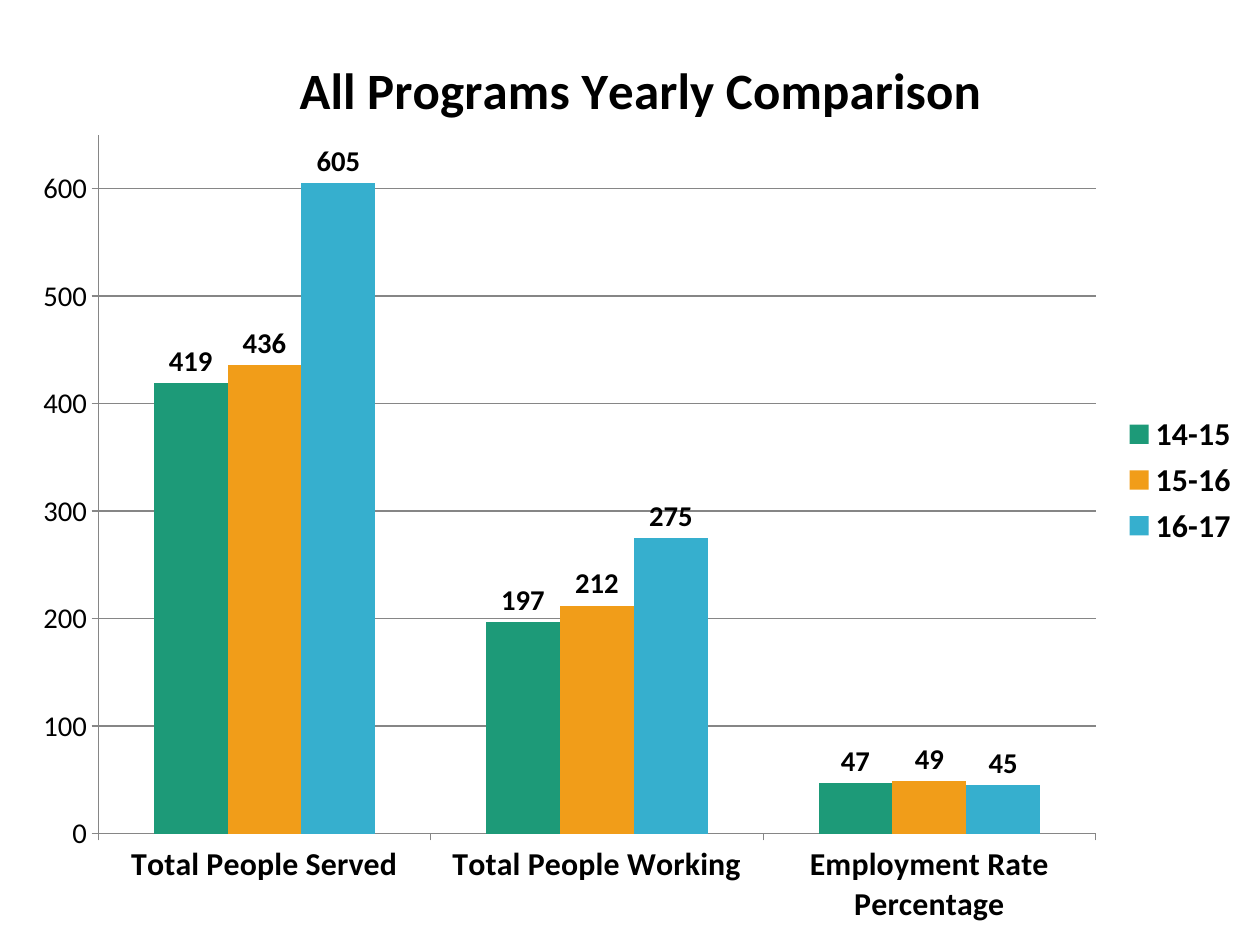
from lxml.etree import SubElement
from pptx import Presentation
from pptx.chart.data import CategoryChartData
from pptx.dml.color import RGBColor
from pptx.enum.chart import XL_CHART_TYPE as ChartType, XL_LABEL_POSITION as LabelPos
from pptx.enum.chart import XL_LEGEND_POSITION as LegendPos, XL_TICK_MARK as Tick
from pptx.oxml.ns import qn
from pptx.util import Inches, Pt

TITLE = "All Programs Yearly Comparison"
CATEGORIES = ["Total People Served", "Total People Working", "Employment Rate Percentage"]
SERIES = [
    ("14-15", (419, 197, 47), RGBColor(0x1D, 0x9A, 0x78)),
    ("15-16", (436, 212, 49), RGBColor(0xF1, 0x9D, 0x19)),
    ("16-17", (605, 275, 45), RGBColor(0x36, 0xAF, 0xCE)),
]
BLACK = RGBColor(0, 0, 0)
GRAY = RGBColor(0x86, 0x86, 0x86)
FONT = "Calibri"


def set_font(font, size, bold=True):
    font.name, font.size, font.bold = FONT, Pt(size), bold
    font.color.rgb = BLACK


def place(parent, index, **settings):
    """Give a chart part a manual layout, in fractions of the chart."""
    for old in parent.findall(qn("c:layout")):
        parent.remove(old)
    layout = SubElement(parent, qn("c:layout"))
    parent.insert(index, layout)
    manual = SubElement(layout, qn("c:manualLayout"))
    for name, value in settings.items():
        SubElement(manual, qn(f"c:{name}")).set("val", str(value))


prs = Presentation()
prs.slide_width, prs.slide_height = Inches(11), Inches(8.3)
s = prs.slides.add_slide(prs.slide_layouts[6])

data = CategoryChartData()
data.categories = CATEGORIES
for name, values, _ in SERIES:
    data.add_series(name, values)
chart = s.shapes.add_chart(ChartType.COLUMN_CLUSTERED, Inches(0.17), Inches(0.15),
                           Inches(10.75), Inches(8.08), data).chart
set_font(chart.font, 10)

tf = chart.chart_title.text_frame
tf.text = TITLE
set_font(tf.paragraphs[0].font, 32)
place(chart.chart_title._element, 1, xMode="edge", yMode="edge", x=0.22, y=0.03)

chart.has_legend = True
chart.legend.position = LegendPos.RIGHT
chart.legend.include_in_layout = False
set_font(chart.legend.font, 20)

plot = chart.plots[0]
plot.gap_width, plot.overlap, plot.vary_by_categories = 150, 0, False
for series, (_, _, color) in zip(plot.series, SERIES):
    series.format.fill.solid()
    series.format.fill.fore_color.rgb = color
    labels = series.data_labels
    labels.show_value = True
    labels.position = LabelPos.OUTSIDE_END
    set_font(labels.font, 18)
place(chart._chartSpace.chart.plotArea, 0, layoutTarget="inner", xMode="edge",
      yMode="edge", x=0.064, y=0.127, w=0.81, h=0.755)

cat_axis, val_axis = chart.category_axis, chart.value_axis
for axis, size, bold in ((cat_axis, 20, True), (val_axis, 18, False)):
    set_font(axis.tick_labels.font, size, bold)
    axis.major_tick_mark, axis.minor_tick_mark = Tick.OUTSIDE, Tick.NONE
    axis.format.line.color.rgb = GRAY
val_axis.minimum_scale, val_axis.maximum_scale, val_axis.major_unit = 0, 650, 100
val_axis.has_major_gridlines = True
val_axis.major_gridlines.format.line.color.rgb = GRAY

prs.save("out.pptx")
